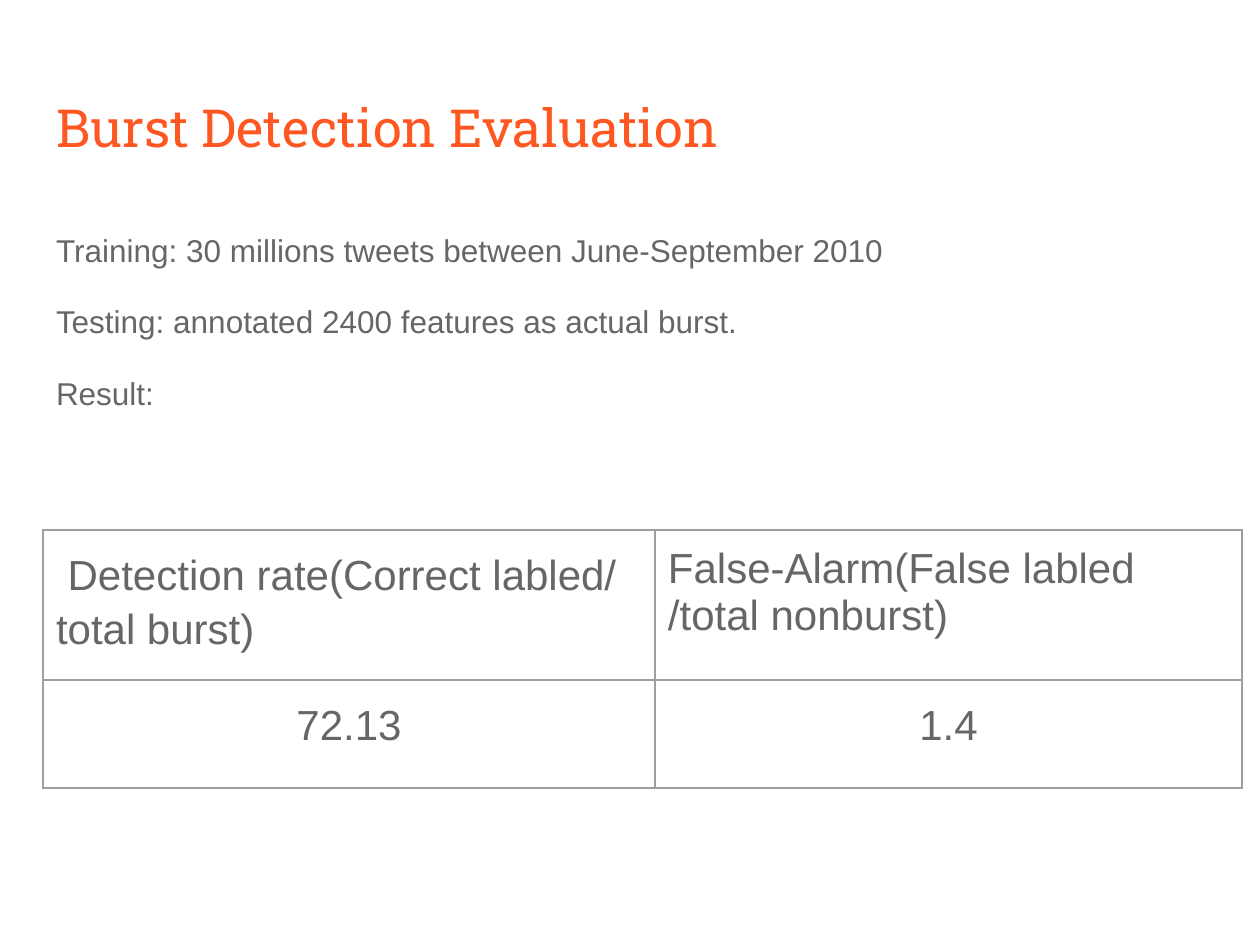
from dataclasses import dataclass

from lxml.etree import SubElement
from pptx import Presentation
from pptx.dml.color import RGBColor
from pptx.enum.text import MSO_ANCHOR, MSO_AUTO_SIZE, PP_ALIGN
from pptx.oxml.ns import qn
from pptx.util import Emu, Pt

PX_PER_INCH = 126


def px(length):
    return Emu(round(length * 914400 / PX_PER_INCH))


@dataclass(frozen=True)
class Theme:
    heading_font: str = "Roboto Slab"
    body_font: str = "Arial"
    accent: str = "FF5722"
    text: str = "666666"
    border: str = "9E9E9E"
    border_width: float = 0.75
    title_size: int = 30
    body_size: int = 18
    table_size: int = 24


def write(paragraph, text, *, font, size, color, align=PP_ALIGN.LEFT,
          line_spacing=1.0, after=0):
    """Put formatted text into a paragraph."""
    paragraph.alignment = align
    paragraph.line_spacing = line_spacing
    paragraph.space_before = Pt(0)
    paragraph.space_after = Pt(after)
    run = paragraph.add_run()
    run.text = text
    run.font.name = font
    run.font.size = Pt(size)
    run.font.color.rgb = RGBColor.from_string(color)


class SlideBuilder:
    def __init__(self, slide, theme):
        self.slide = slide
        self.theme = theme

    def _place(self, placeholder, box):
        placeholder.left, placeholder.top, placeholder.width, placeholder.height = map(px, box)
        frame = placeholder.text_frame
        frame.margin_left = frame.margin_right = px(13)
        frame.margin_top = frame.margin_bottom = px(13)
        frame.vertical_anchor = MSO_ANCHOR.TOP
        frame.auto_size = MSO_AUTO_SIZE.NONE
        frame.word_wrap = True
        return frame

    def title(self, text, box):
        frame = self._place(self.slide.shapes.title, box)
        write(frame.paragraphs[0], text, font=self.theme.heading_font,
              size=self.theme.title_size, color=self.theme.accent)

    def body(self, lines, box):
        frame = self._place(self.slide.placeholders[1], box)
        for index, line in enumerate(lines):
            paragraph = frame.add_paragraph() if index else frame.paragraphs[0]
            write(paragraph, line, font=self.theme.body_font, size=self.theme.body_size,
                  color=self.theme.text, line_spacing=1.15, after=16)
            properties = paragraph._p.get_or_add_pPr()
            properties.set("marL", "0")
            properties.set("indent", "0")
            SubElement(properties, qn("a:buNone"))

    def table(self, rows, left, top, widths, heights):
        table = self.slide.shapes.add_table(
            len(rows), len(widths), px(left), px(top),
            px(sum(widths)), px(sum(heights))).table
        table.first_row = table.horz_banding = False
        for column, width in zip(table.columns, widths):
            column.width = px(width)
        for row, height, entries in zip(table.rows, heights, rows):
            row.height = px(height)
            for cell, (text, style) in zip(row.cells, entries):
                self._cell(cell, text, style)

    def _cell(self, cell, text, style):
        cell.margin_left = cell.margin_right = px(13)
        cell.margin_top = cell.margin_bottom = px(16)
        write(cell.text_frame.paragraphs[0], text, font=self.theme.body_font,
              size=self.theme.table_size, color=self.theme.text, **style)
        # Borders come before the fill in the cell properties
        properties = cell._tc.get_or_add_tcPr()
        for side in ("lnL", "lnR", "lnT", "lnB"):
            line = SubElement(properties, qn(f"a:{side}"), w=str(Pt(self.theme.border_width)))
            fill = SubElement(line, qn("a:solidFill"))
            SubElement(fill, qn("a:srgbClr"), val=self.theme.border)
        cell.fill.background()


def main():
    presentation = Presentation()
    presentation.slide_width = px(1260)
    presentation.slide_height = px(945)
    slide = presentation.slides.add_slide(presentation.slide_layouts[1])
    builder = SlideBuilder(slide, Theme())

    # Heading
    builder.title("Burst Detection Evaluation", (43, 82, 1174, 106))

    # Data sets
    builder.body([
        "Training: 30 millions tweets between June-September 2010",
        "Testing: annotated 2400 features as actual burst.",
        "Result:",
    ], (43, 212, 1174, 627))

    # Evaluation results
    spaced = {"line_spacing": 1.15, "after": 16}
    centered = {**spaced, "align": PP_ALIGN.CENTER}
    results = [
        [(" Detection rate(Correct labled/ total burst)", spaced),
         ("False-Alarm(False labled /total nonburst)", {})],
        [("72.13", centered), ("1.4", centered)],
    ]
    builder.table(results, 43, 530, widths=(612, 587), heights=(150, 108))

    presentation.save("out.pptx")


if __name__ == "__main__":
    main()
